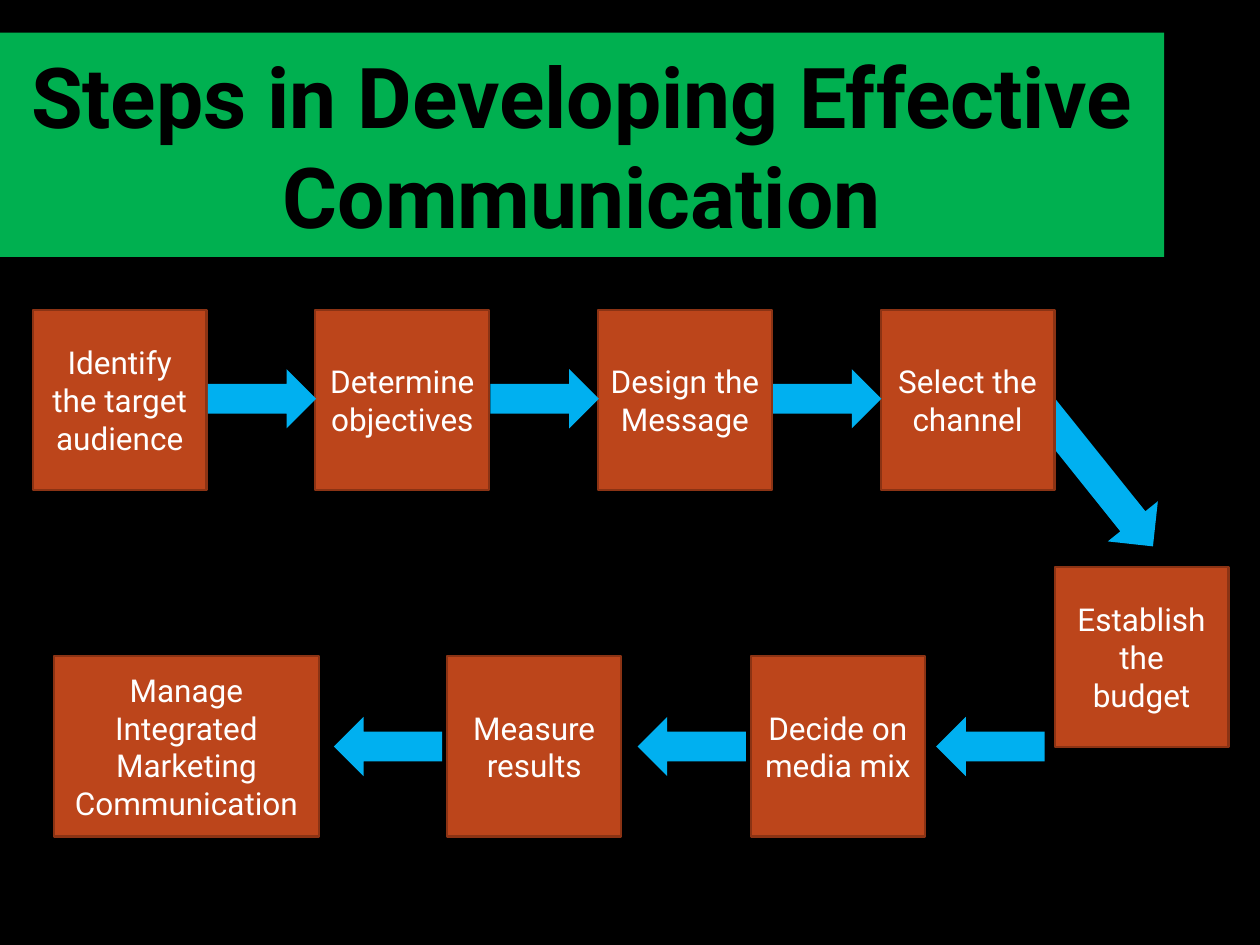
"""Build the slide on the steps in developing effective communication."""
from dataclasses import dataclass

import pptx
import pptx.dml.color
import pptx.enum.shapes
import pptx.enum.text
import pptx.util

Inches = pptx.util.Inches
Pt = pptx.util.Pt
RGB = pptx.dml.color.RGBColor.from_string
MSO_SHAPE = pptx.enum.shapes.MSO_SHAPE


@dataclass(frozen=True)
class Theme:
    """Colours, font and type sizes of the slide."""
    background: str = "000000"
    banner: str = "00B050"
    box: str = "BC451B"
    box_line: str = "8B3314"
    arrow: str = "00B0F0"
    title_text: str = "000000"
    box_text: str = "FFFFFF"
    font: str = "Roboto"
    title_size: int = 48
    box_size: int = 18


@dataclass(frozen=True)
class Step:
    """A box holding one step of the process."""
    text: str
    left: float
    top: float
    width: float = 1.38
    height: float = 1.43


@dataclass(frozen=True)
class Arrow:
    """A block arrow leading from one step to the next."""
    left: float
    top: float
    width: float = 0.86
    height: float = 0.47
    rotation: float = 0


THEME = Theme()
TOP_ROW, BOTTOM_ROW = 2.46, 5.21
TOP_LEFT, TOP_PITCH = 0.26, 2.243
TOP_TEXTS = ("Identify the target audience", "Determine objectives",
             "Design the Message", "Select the channel")
STEPS = [Step(text, TOP_LEFT + i * TOP_PITCH, TOP_ROW)
         for i, text in enumerate(TOP_TEXTS)] + [
    Step("Establish the budget", 8.37, 4.5),
    Step("Decide on media mix", 5.96, BOTTOM_ROW),
    Step("Measure results", 3.55, BOTTOM_ROW),
    Step("Manage Integrated Marketing Communication", 0.43, BOTTOM_ROW, width=2.1),
]
TURN = Arrow(7.98, 3.52, 1.44, 0.51, rotation=51.3)
ARROWS = [Arrow(1.65 + i * TOP_PITCH, 2.93) for i in range(3)] + [
    Arrow(left, 5.69, rotation=180) for left in (7.43, 5.06, 2.65)]


def write(sp, text: str, *, size: int, color: str, bold: bool = False) -> None:
    """Write centred, wrapped text into a shape."""
    tf = sp.text_frame
    tf.word_wrap = True
    tf.auto_size = pptx.enum.text.MSO_AUTO_SIZE.NONE
    tf.vertical_anchor = pptx.enum.text.MSO_ANCHOR.MIDDLE
    p = tf.paragraphs[0]
    p.alignment = pptx.enum.text.PP_ALIGN.CENTER
    r = p.add_run()
    r.text = text
    r.font.name = THEME.font
    r.font.size = Pt(size)
    r.font.bold = bold
    r.font.color.rgb = RGB(color)


def paint(target, color: str) -> None:
    """Give a shape or background a solid fill."""
    target.fill.solid()
    target.fill.fore_color.rgb = RGB(color)


def draw_shape(s, kind: MSO_SHAPE, item: Step | Arrow, color: str):
    """Add a filled preset shape without a shadow."""
    sp = s.shapes.add_shape(kind, Inches(item.left), Inches(item.top),
                            Inches(item.width), Inches(item.height))
    sp.shadow.inherit = False
    paint(sp, color)
    return sp


def draw_step(s, step: Step) -> None:
    """Add the box of one step."""
    sp = draw_shape(s, MSO_SHAPE.RECTANGLE, step, THEME.box)
    sp.line.color.rgb = RGB(THEME.box_line)
    sp.line.width = Pt(1.25)
    write(sp, step.text, size=THEME.box_size, color=THEME.box_text)


def draw_arrow(s, arrow: Arrow) -> None:
    """Add one block arrow."""
    sp = draw_shape(s, MSO_SHAPE.RIGHT_ARROW, arrow, THEME.arrow)
    sp.line.fill.background()
    sp.rotation = arrow.rotation


def draw_title(s) -> None:
    """Turn the title placeholder into the banner."""
    sp = s.shapes.title
    sp.left, sp.top = Inches(0), Inches(0.26)
    sp.width, sp.height = Inches(9.24), Inches(1.78)
    paint(sp, THEME.banner)
    write(sp, "Steps in Developing Effective Communication",
          size=THEME.title_size, color=THEME.title_text, bold=True)


def main() -> None:
    """Build and save the presentation."""
    prs = pptx.Presentation()
    prs.slide_width, prs.slide_height = Inches(10), Inches(7.5)
    s = prs.slides.add_slide(prs.slide_layouts[5])
    paint(s.background, THEME.background)
    draw_title(s)
    draw_arrow(s, TURN)
    for step in STEPS:
        draw_step(s, step)
    for arrow in ARROWS:
        draw_arrow(s, arrow)
    prs.save("out.pptx")


if __name__ == "__main__":
    main()
